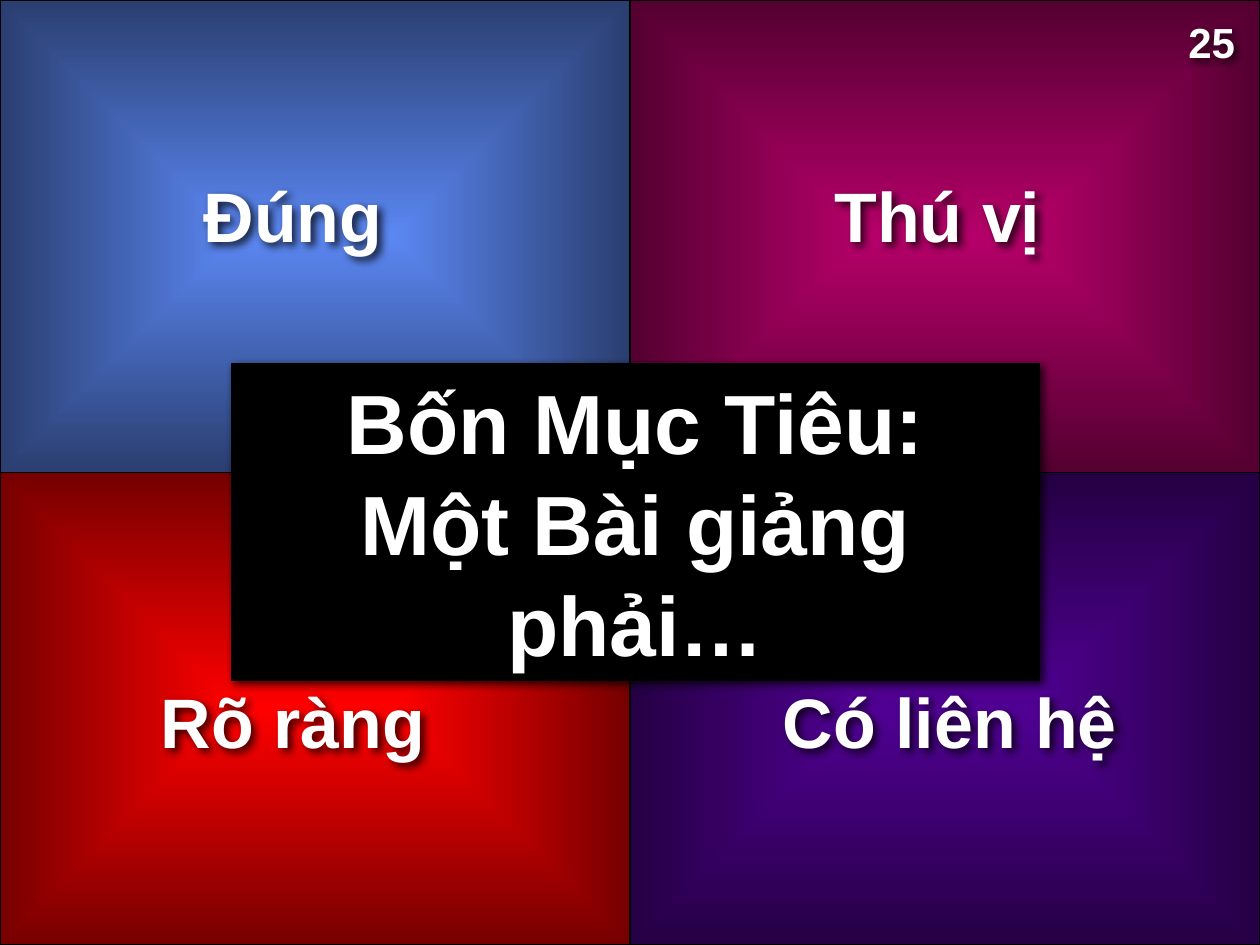
import pptx
import pptx.dml.color
import pptx.enum.shapes
import pptx.enum.text
import pptx.oxml
import pptx.oxml.ns
import pptx.util

RGB = pptx.dml.color.RGBColor
ALIGN = pptx.enum.text.PP_ALIGN
ANCHOR = pptx.enum.text.MSO_ANCHOR

WHITE = RGB(0xFF, 0xFF, 0xFF)
BLACK = RGB(0x00, 0x00, 0x00)
BLUE, DARK_BLUE = RGB(0x5B, 0x87, 0xF2), RGB(0x2A, 0x3E, 0x70)
MAGENTA, DARK_MAGENTA = RGB(0xB5, 0x00, 0x69), RGB(0x54, 0x00, 0x31)
RED, DARK_RED = RGB(0xFF, 0x00, 0x00), RGB(0x76, 0x00, 0x00)
PURPLE, DARK_PURPLE = RGB(0x50, 0x00, 0x93), RGB(0x25, 0x00, 0x44)

PX_PER_INCH = 126
WIDTH, HEIGHT = 1260, 945
NAMESPACE = pptx.oxml.ns.nsdecls("a")
CENTRE_PATH = (
    f'<a:path {NAMESPACE} path="shape">'
    '<a:fillToRect l="50000" t="50000" r="50000" b="50000"/></a:path>'
)
SHADOW = (
    f'<a:effectLst {NAMESPACE}><a:outerShdw blurRad="63500" dist="38100" dir="2700000">'
    '<a:srgbClr val="000000"><a:alpha val="75000"/></a:srgbClr>'
    "</a:outerShdw></a:effectLst>"
)


def px(length):
    return pptx.util.Emu(round(length * 914400 / PX_PER_INCH))


def write_text(shape, text, size=40, align=ALIGN.CENTER, wrap=True, anchor=ANCHOR.TOP):
    frame = shape.text_frame
    frame.word_wrap = wrap
    frame.vertical_anchor = anchor
    frame.auto_size = pptx.enum.text.MSO_AUTO_SIZE.NONE
    frame.text = text
    para = frame.paragraphs[0]
    para.alignment = align
    para.space_before = pptx.util.Pt(0)
    for span in para.runs:
        span.font.name = "Arial"
        span.font.size = pptx.util.Pt(size)
        span.font.bold = True
        span.font.color.rgb = WHITE


class SlideBuilder:
    def __init__(self, page):
        self.page = page

    def add_shadow(self, shape):
        shape.element.spPr.append(pptx.oxml.parse_xml(SHADOW))

    def quadrant(self, left, top, inner, outer):
        box = self.page.shapes.add_shape(
            pptx.enum.shapes.MSO_SHAPE.RECTANGLE,
            px(left), px(top), px(WIDTH / 2), px(HEIGHT / 2))
        box.shadow.inherit = False
        box.fill.gradient()
        for stop, color in zip(box.fill.gradient_stops, (inner, outer)):
            stop.color.rgb = color
        linear = box.element.spPr.find(".//" + pptx.oxml.ns.qn("a:lin"))
        linear.getparent().replace(linear, pptx.oxml.parse_xml(CENTRE_PATH))
        box.line.color.rgb = BLACK
        box.line.width = pptx.util.Pt(1)

    def label(self, text, left, top, width, height=97, **style):
        box = self.page.shapes.add_textbox(px(left), px(top), px(width), px(height))
        write_text(box, text, **style)
        self.add_shadow(box)

    def title(self, text, left, top, width, height, **style):
        title = self.page.shapes.title
        title.left, title.top = px(left), px(top)
        title.width, title.height = px(width), px(height)
        title.fill.solid()
        title.fill.fore_color.rgb = BLACK
        write_text(title, text, **style)
        self.add_shadow(title)
        # Bring the title in front of the quadrants
        title.element.getparent().append(title.element)


def main():
    deck = pptx.Presentation()
    deck.slide_width, deck.slide_height = px(WIDTH), px(HEIGHT)
    builder = SlideBuilder(deck.slides.add_slide(deck.slide_layouts[5]))

    # Four coloured quadrants
    colors = [(BLUE, DARK_BLUE), (MAGENTA, DARK_MAGENTA),
              (RED, DARK_RED), (PURPLE, DARK_PURPLE)]
    for index, (inner, outer) in enumerate(colors):
        row, column = divmod(index, 2)
        builder.quadrant(column * WIDTH / 2, row * HEIGHT / 2, inner, outer)

    # One goal in each quadrant
    builder.label("Đúng", 162, 166, 262)
    builder.label("Thú vị", 688, 166, 499)
    builder.label("Rõ ràng", 104, 672, 378)
    builder.label("Có liên hệ", 761, 672, 378)

    # Central title and page number
    builder.title("Bốn Mục Tiêu:\vMột Bài giảng phải…", 231, 363, 809, 318,
                  size=48, anchor=ANCHOR.MIDDLE)
    builder.label("25", 1176, 10, 72, 63, size=24, align=ALIGN.LEFT, wrap=False)

    deck.save("out.pptx")


if __name__ == "__main__":
    main()
